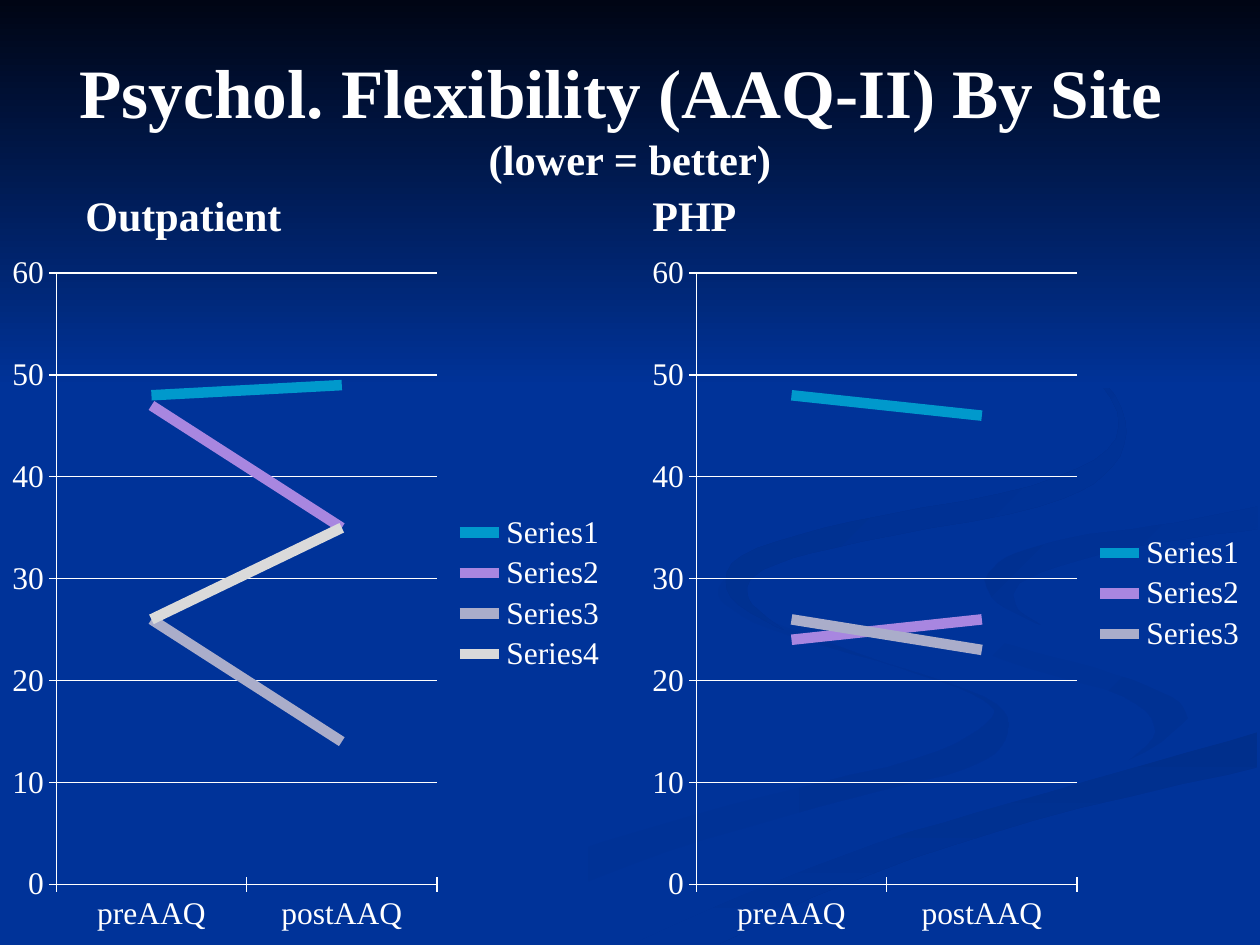
from pptx import Presentation
from pptx.chart.data import CategoryChartData
from pptx.dml.color import RGBColor
from pptx.enum.chart import XL_CHART_TYPE, XL_LEGEND_POSITION, XL_TICK_MARK
from pptx.enum.text import MSO_ANCHOR, PP_ALIGN
from pptx.util import Inches, Pt

FONT = "Times New Roman"
WHITE = RGBColor(0xFF, 0xFF, 0xFF)
BLUE = RGBColor(0x00, 0x33, 0x99)
NIGHT = RGBColor(0x00, 0x05, 0x14)
DEEP = RGBColor(0x00, 0x2F, 0x8C)
DUSK = RGBColor(0x00, 0x30, 0x91)
SOFT = RGBColor(0x00, 0x31, 0x93)
LINES = [
    RGBColor(0x00, 0x99, 0xCC),
    RGBColor(0xA8, 0x86, 0xE0),
    RGBColor(0xAA, 0xAD, 0xCA),
    RGBColor(0xDA, 0xDA, 0xDA),
]

TITLE = [("Psychol. Flexibility (AAQ-II) By Site ", 39.6), ("(lower = better)", 24.3)]
CATS = ["preAAQ", "postAAQ"]
# heading, heading left, chart left, one (pre, post) pair per series
SITES = [
    ("Outpatient", 0.58, 0, [(48, 49), (47, 35), (26, 14), (26, 35)]),
    ("PHP", 5.08, 5.08, [(48, 46), (24, 26), (26, 23)]),
]

# Edges that neighbouring ribbons share, in hundredths of an inch
BEND = [(724, 464), (733, 483), (792, 509), (870, 530), (930, 553), (943, 570)]
SWEEP = [(503, 749), (569, 719), (696, 669), (831, 629), (998, 581)]
CREST = [(781, 460), (799, 442), (849, 427), (933, 415), (998, 402)]

# Back to front: first colour, last colour, clockwise angle, smooth edges
RIBBONS = [
    (BLUE, SOFT, 0, [
        [(575, 459), (572, 476), (611, 499), (714, 530), (781, 556), (783, 574),
         (727, 602), (579, 639), (417, 690), (300, 749)],
        [(361, 749), (499, 687), (651, 640), (769, 609), (800, 581), (781, 553),
         (682, 519), (594, 485), (575, 459)]]),
    (BLUE, SOFT, 45, [
        BEND, [(943, 570), (932, 589), (894, 605)],
        [(894, 605), (917, 581), (892, 553), (797, 524), (739, 494), (724, 464)]]),
    (DEEP, BLUE, 90, [
        SWEEP, [(998, 609), (821, 651), (670, 702), (571, 749)]]),
    (BLUE, BLUE, 0, [
        BEND, [(943, 570), (892, 605), (743, 643), (619, 684), (477, 749)],
        SWEEP, [(999, 538), (866, 509), (794, 480), (781, 460)],
        CREST, [(999, 387), (874, 408), (755, 432), (724, 464)]]),
    (DUSK, BLUE, 45, [
        CREST, [(998, 420), (896, 435), (816, 459), (806, 480), (826, 496)],
        [(826, 496), (791, 478), (781, 460)]]),
    (DEEP, BLUE, 45, [
        [(762, 233), (843, 275), (890, 324), (883, 370), (825, 402), (683, 430),
         (606, 452), (594, 475), (622, 500)],
        [(622, 500), (580, 474), (589, 441), (676, 414), (818, 386), (886, 348),
         (862, 292), (762, 233)]]),
    (NIGHT, BLUE, 90, [[(0, 0), (1000, 0)], [(1000, 308), (0, 308)]]),
]


def smooth(edge, steps=5):
    """Run a Catmull-Rom curve through the points of an edge."""
    if len(edge) == 2:
        return edge
    ends = [edge[0], *edge, edge[-1]]
    curve = []
    for group in zip(ends, ends[1:], ends[2:], ends[3:]):
        for step in range(steps):
            t = step / steps
            curve.append(tuple(
                b + t * (c - a) / 2 + t**2 * (a - 2.5 * b + 2 * c - d / 2)
                + t**3 * (d - a + 3 * (b - c)) / 2
                for a, b, c, d in zip(*group)))
    return curve + [edge[-1]]


def add_ribbon(slide, first, last, angle, edges):
    points = [point for edge in edges for point in smooth(edge)]
    pen = slide.shapes.build_freeform(*points[0], scale=Inches(0.01))
    pen.add_line_segments(points[1:], close=True)
    shape = pen.convert_to_shape()
    shape.shadow.inherit = False
    shape.line.fill.background()
    if first == last:
        shape.fill.solid()
        shape.fill.fore_color.rgb = first
        return
    shape.fill.gradient()
    shape.fill.gradient_angle = -angle % 360
    for stop, color in zip(shape.fill.gradient_stops, (first, last)):
        stop.color.rgb = color


def add_text(slide, box, parts, anchor, align):
    """Place bold (text, size) parts, one to a line, in one paragraph."""
    frame = slide.shapes.add_textbox(*map(Inches, box)).text_frame
    frame.word_wrap = True
    frame.vertical_anchor = anchor
    par = frame.paragraphs[0]
    par.text = "\v".join(text for text, size in parts)
    par.alignment = align
    for run, (text, size) in zip(par.runs, parts):
        run.font.name = FONT
        run.font.size = Pt(size)
        run.font.bold = True
        run.font.color.rgb = WHITE


def set_line(line, color, width):
    line.color.rgb = color
    line.width = Pt(width)


def add_lines(slide, left, rows):
    data = CategoryChartData()
    data.categories = CATS
    for num, row in enumerate(rows, 1):
        data.add_series(f"Series{num}", row)
    box = map(Inches, (left, 1.92, 4.92, 5.58))
    chart = slide.shapes.add_chart(XL_CHART_TYPE.LINE, *box, data).chart
    chart.has_title = False
    chart.font.name = FONT
    chart.font.size = Pt(18)
    chart.font.color.rgb = WHITE
    chart.has_legend = True
    chart.legend.position = XL_LEGEND_POSITION.RIGHT
    chart.legend.include_in_layout = False
    for axis in (chart.category_axis, chart.value_axis):
        axis.major_tick_mark = XL_TICK_MARK.CROSS
        axis.minor_tick_mark = XL_TICK_MARK.NONE
        set_line(axis.format.line, WHITE, 0.75)
    scale = chart.value_axis
    scale.minimum_scale, scale.maximum_scale, scale.major_unit = 0, 60, 10
    scale.has_major_gridlines = True
    set_line(scale.major_gridlines.format.line, WHITE, 0.75)
    plot = chart.plots[0]
    plot.vary_by_categories = False
    for series, color in zip(plot.series, LINES):
        series.smooth = False
        set_line(series.format.line, color, 6)


def main():
    prs = Presentation()
    prs.slide_width, prs.slide_height = Inches(10), Inches(7.5)
    slide = prs.slides.add_slide(prs.slide_layouts[6])
    slide.background.fill.solid()
    slide.background.fill.fore_color.rgb = BLUE
    for ribbon in RIBBONS:
        add_ribbon(slide, *ribbon)
    add_text(slide, (0.5, 0.3, 9, 1.25), TITLE, MSO_ANCHOR.MIDDLE, PP_ALIGN.CENTER)
    for name, left, edge, rows in SITES:
        box = (left, 1.25, 4.42, 0.7)
        add_text(slide, box, [(name, 24)], MSO_ANCHOR.BOTTOM, PP_ALIGN.LEFT)
        add_lines(slide, edge, rows)
    prs.save("out.pptx")


if __name__ == "__main__":
    main()
